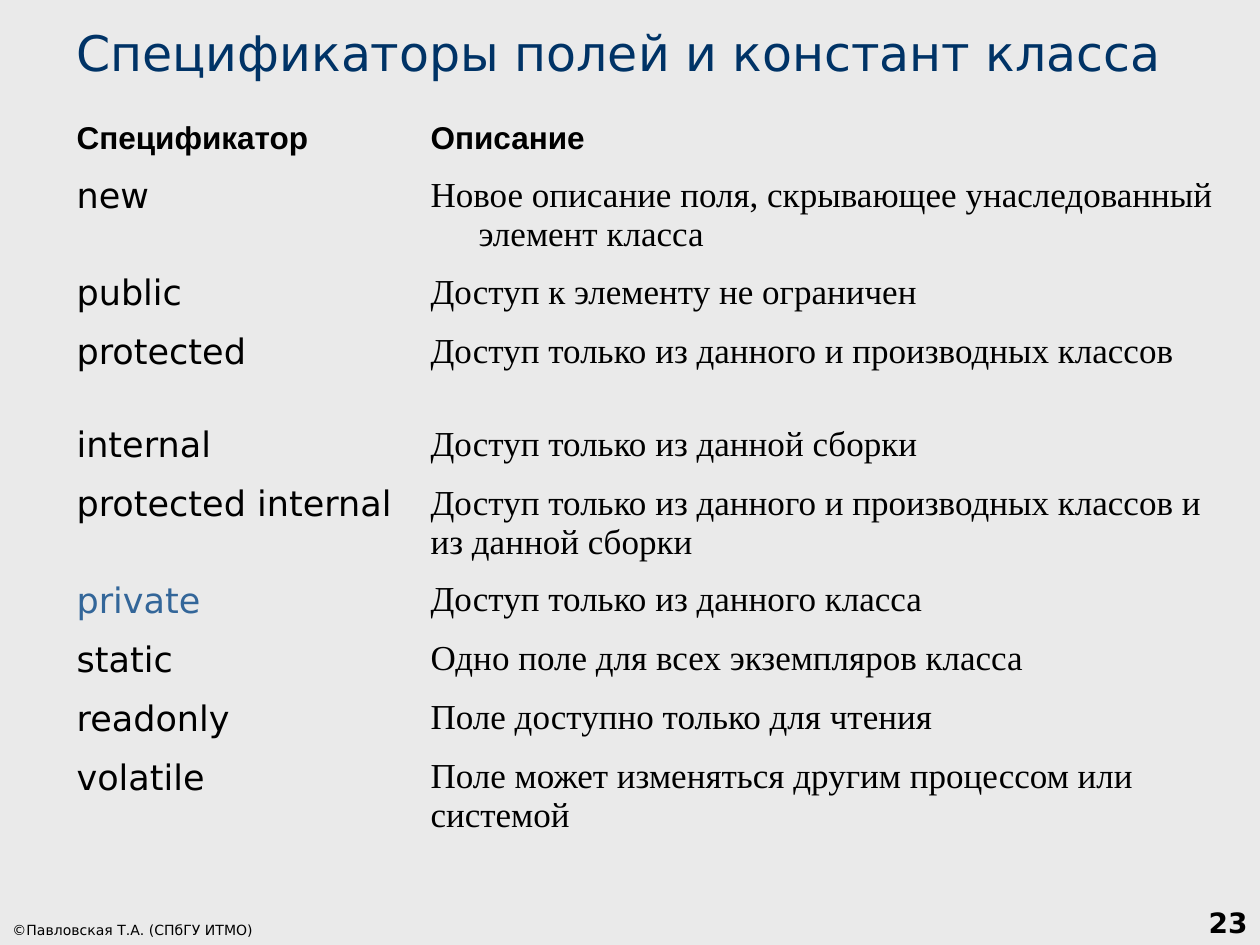
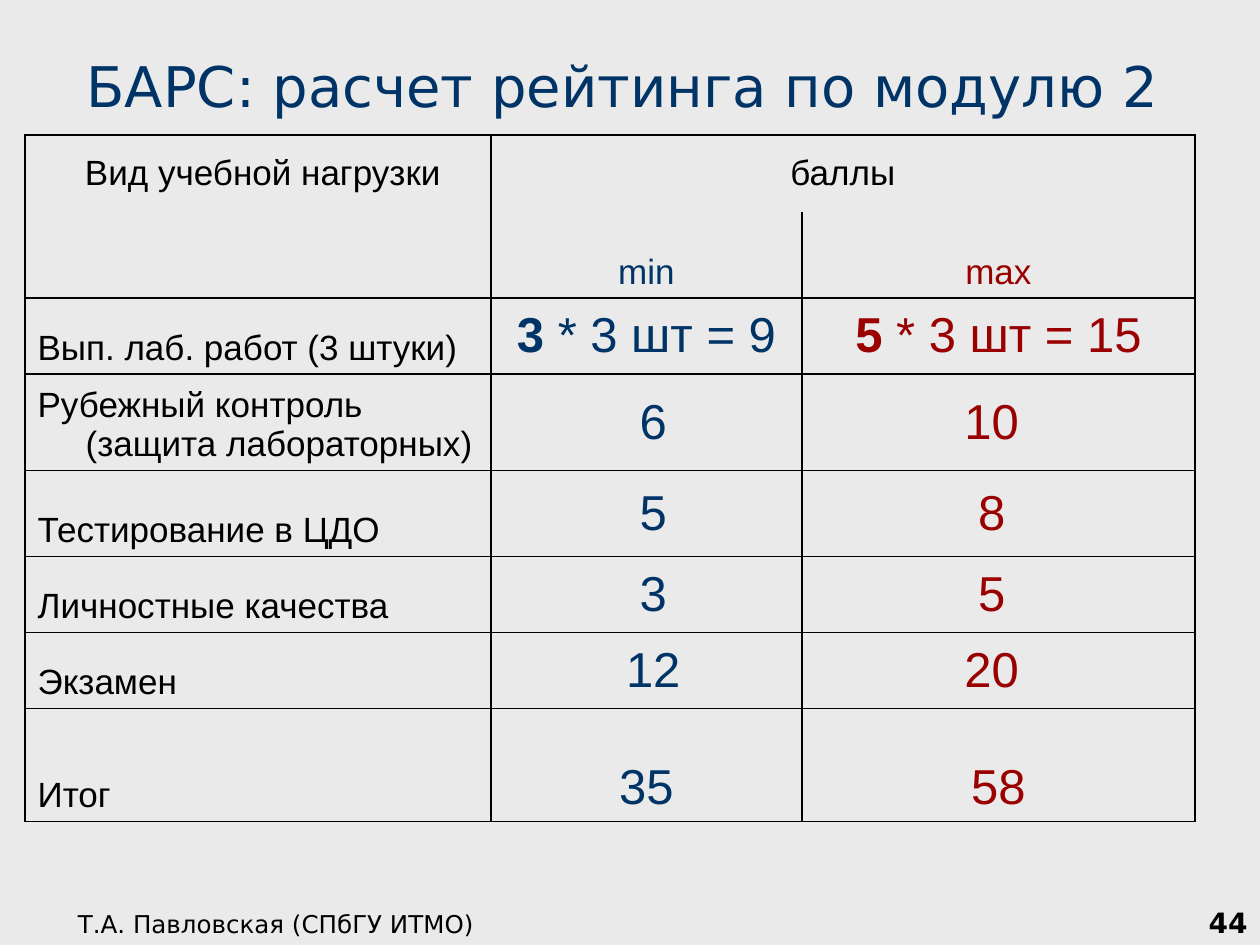
from dataclasses import dataclass

from lxml.etree import SubElement
from pptx import Presentation
from pptx.dml.color import RGBColor
from pptx.enum.text import MSO_ANCHOR, PP_ALIGN
from pptx.oxml.ns import qn
from pptx.util import Emu, Pt

PIXELS_PER_INCH = 126
WIDTH, HEIGHT = 1260, 945
HANGING = 48

BACKGROUND = RGBColor(0xEA, 0xEA, 0xEA)
BLACK = RGBColor(0x00, 0x00, 0x00)
NAVY = RGBColor(0x00, 0x33, 0x66)
BLUE = RGBColor(0x33, 0x66, 0x99)
RED = RGBColor(0x9A, 0x00, 0x00)

SANS, SERIF, ARIAL = "DejaVu Sans", "Times New Roman", "Arial"
PLAIN_TABLE = "{2D5ABB26-0587-4C30-8999-92F81FD0307C}"


def px(length):
    return Emu(round(length * 914400 / PIXELS_PER_INCH))


def text_format(name, size, color=BLACK, bold=False):
    return {"name": name, "size": Pt(size), "bold": bold, "color": color}


TITLE = text_format(SANS, 28, NAVY)
LARGE_TITLE = text_format(SANS, 32, NAVY)
COPYRIGHT = text_format(SANS, 8)
AUTHOR = text_format(SANS, 14)
PAGE_NUMBER = text_format(SANS, 16, bold=True)
HEADING = text_format(ARIAL, 18, bold=True)
KEYWORD = text_format(SANS, 20)
DESCRIPTION = text_format(SERIF, 20)
LABEL = text_format(ARIAL, 20)
MIN_SCORE = text_format(ARIAL, 28, NAVY)
MAX_SCORE = text_format(ARIAL, 28, RED)


@dataclass
class Line:
    """One paragraph; lead is a bold start before the text."""
    text: str
    style: dict
    lead: str = ""
    align: PP_ALIGN = PP_ALIGN.LEFT
    anchor: MSO_ANCHOR = MSO_ANCHOR.TOP
    hanging: int = 0


class SlideBuilder:
    def __init__(self):
        self.deck = Presentation()
        self.deck.slide_width, self.deck.slide_height = px(WIDTH), px(HEIGHT)
        self.slide = None

    def new_slide(self, number):
        self.slide = self.deck.slides.add_slide(self.deck.slide_layouts[6])
        fill = self.slide.background.fill
        fill.solid()
        fill.fore_color.rgb = BACKGROUND
        self.text(998, 882, 262, 63, Line(str(number), PAGE_NUMBER, align=PP_ALIGN.RIGHT))

    def fill_paragraph(self, frame, line):
        para = frame.paragraphs[0]
        para.alignment = line.align
        if line.hanging:
            properties = para._p.get_or_add_pPr()
            properties.set("marL", str(px(line.hanging)))
            properties.set("indent", str(-px(line.hanging)))
        for text, changes in ((line.lead, {"bold": True}), (line.text, {})):
            if not text:
                continue
            span = para.add_run()
            span.text = text
            for key, value in {**line.style, **changes}.items():
                if key == "color":
                    span.font.color.rgb = value
                else:
                    setattr(span.font, key, value)

    def text(self, left, top, width, height, line):
        box = self.slide.shapes.add_textbox(px(left), px(top), px(width), px(height))
        box.text_frame.word_wrap = True
        box.text_frame.vertical_anchor = MSO_ANCHOR.BOTTOM
        self.fill_paragraph(box.text_frame, line)

    def table(self, left, top, widths, heights, rows):
        frame = self.slide.shapes.add_table(
            len(heights), len(widths), px(left), px(top), px(sum(widths)), px(sum(heights)))
        frame.element.find(".//" + qn("a:tableStyleId")).text = PLAIN_TABLE
        table = frame.table
        table.first_row = table.horz_banding = False
        for column, width in zip(table.columns, widths):
            column.width = px(width)
        for table_row, height, lines in zip(table.rows, heights, rows):
            table_row.height = px(height)
            for cell, line in zip(table_row.cells, lines):
                cell.fill.background()
                if line:
                    cell.vertical_anchor = line.anchor
                    self.fill_paragraph(cell.text_frame, line)
        return table

    def borders(self, cell, sides):
        """Draw black lines on the given sides, out of L, R, T and B."""
        properties = cell._tc.get_or_add_tcPr()
        for index, side in enumerate(sides):
            border = SubElement(properties, qn(f"a:ln{side}"), w=str(Pt(1)))
            fill = SubElement(border, qn("a:solidFill"))
            SubElement(fill, qn("a:srgbClr"), val=str(BLACK))
            properties.insert(index, border)


def specifiers_slide(builder):
    builder.new_slide(23)
    builder.text(0, 910, 392, 35, Line("©Павловская Т.А. (СПбГУ ИТМО)", COPYRIGHT))
    builder.text(64, 16, 1181, 72, Line("Спецификаторы полей и констант класса", TITLE))
    short, tall = 59, 93
    specifiers = [
        ("new", "Новое описание поля, скрывающее унаследованный элемент класса", tall),
        ("public", "Доступ к элементу не ограничен", short),
        ("protected", "Доступ только из данного и производных классов", tall),
        ("internal", "Доступ только из данной сборки", short),
        ("protected internal",
         "Доступ только из данного и производных классов и из данной сборки", tall),
        ("private", "Доступ только из данного класса", short),
        ("static", "Одно поле для всех экземпляров класса", short),
        ("readonly", "Поле доступно только для чтения", short),
        ("volatile", "Поле может изменяться другим процессом или системой", tall),
    ]
    without_indent = {"protected internal", "volatile"}
    rows = [[Line(text, HEADING, hanging=HANGING) for text in ("Спецификатор", "Описание")]]
    for keyword, description, _ in specifiers:
        style = {**KEYWORD, "color": BLUE} if keyword == "private" else KEYWORD
        indent = 0 if keyword in without_indent else HANGING
        rows.append([Line(keyword, style, hanging=HANGING),
                     Line(description, DESCRIPTION, hanging=indent)])
    heights = [55] + [height for _, _, height in specifiers]
    builder.table(64, 115, [354, 825], heights, rows)


def rating_slide(builder):
    builder.new_slide(44)
    builder.text(0, 882, 552, 63,
                 Line("Т.А. Павловская (СПбГУ ИТМО)", AUTHOR, align=PP_ALIGN.CENTER))
    builder.text(74, 45, 1125, 80, Line("БАРС: расчет рейтинга по модулю 2", LARGE_TITLE))

    def centred(text, style, anchor=MSO_ANCHOR.MIDDLE, lead="", hanging=HANGING):
        return Line(text, style, lead, PP_ALIGN.CENTER, anchor, hanging)

    bottom = MSO_ANCHOR.BOTTOM
    rows = [
        [centred(" Вид учебной нагрузки", LABEL, hanging=0), centred("баллы", LABEL), None],
        [None, centred("min", {**LABEL, "color": NAVY}, bottom),
         centred("max", {**LABEL, "color": RED}, bottom)],
    ]
    scores = [
        ("Вып. лаб. работ (3 штуки)", ("3", " * 3 шт = 9"), ("5", " * 3 шт = 15")),
        ("Рубежный контроль (защита лабораторных)", ("", " 6"), ("", "10 ")),
        ("Тестирование в ЦДО", ("", " 5"), ("", "8 ")),
        ("Личностные качества", ("", " 3"), ("", "5 ")),
        ("Экзамен", ("", " 12"), ("", "20 ")),
        ("Итог", ("", "35"), ("", "58")),
    ]
    for label, (min_lead, minimum), (max_lead, maximum) in scores:
        anchor = bottom if label == "Итог" else MSO_ANCHOR.MIDDLE
        rows.append([Line(label, LABEL, anchor=bottom, hanging=HANGING),
                     centred(minimum, MIN_SCORE, anchor, min_lead),
                     centred(maximum, MAX_SCORE, anchor, max_lead)])
    table = builder.table(25, 135, [466, 311, 393], [77, 86, 76, 86, 86, 76, 76, 113], rows)

    table.cell(0, 1).merge(table.cell(0, 2))
    header_sides = {(0, 0): "LRT", (0, 1): "LRT", (0, 2): "RT",
                    (1, 0): "LRB", (1, 1): "LB", (1, 2): "RB"}
    for row in range(len(rows)):
        for column in range(3):
            builder.borders(table.cell(row, column), header_sides.get((row, column), "LRTB"))


def main():
    builder = SlideBuilder()
    specifiers_slide(builder)
    rating_slide(builder)
    builder.deck.save("out.pptx")


if __name__ == "__main__":
    main()
